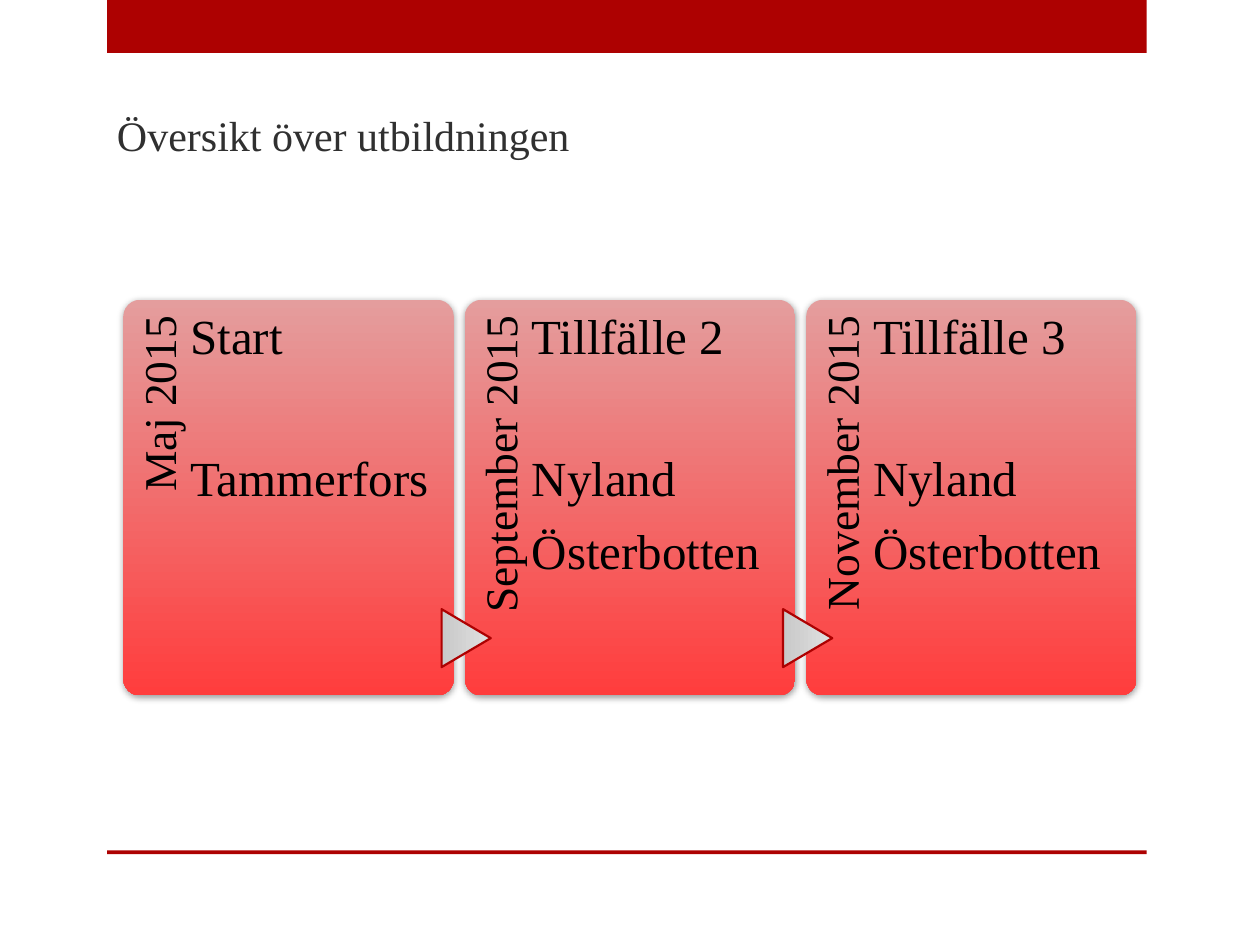
from lxml.etree import SubElement as Sub
from pptx import Presentation
from pptx.dml.color import RGBColor as Rgb
from pptx.enum.shapes import MSO_SHAPE as Kind
from pptx.enum.text import MSO_ANCHOR as Anchor, PP_ALIGN as Align
from pptx.oxml.ns import qn
from pptx.util import Inches, Pt

COLS, ROWS = 100, 75
UNIT = Inches(10) / COLS
FONT = "Times New Roman"
HUES = {"red": "AD0101", "title": "303030", "text": "000000", "shade": "000000",
        "rose": "E49D9D", "hot": "FF3D3D", "pale": "E0E0E0", "grey": "C9C9C9"}
STEPS = [("Maj 2015", ["Start", "Tammerfors"]),
         ("September 2015", ["Tillfälle 2", "Nyland", "Österbotten"]),
         ("November 2015", ["Tillfälle 3", "Nyland", "Österbotten"])]


def hue(name):
    """Return the named colour."""
    return Rgb.from_string(HUES[name])


def scale(*cells):
    """Turn grid cells into slide lengths."""
    return [round(n * UNIT) for n in cells]


def draw(slide, kind, box, fills, turn=0):
    """Add a shape without line or shadow, filled flat or top to bottom."""
    shape = slide.shapes.add_shape(kind, *scale(*box))
    shape.shadow.inherit = False
    shape.rotation = turn
    shape.line.fill.background()
    if len(fills) == 1:
        shape.fill.solid()
        shape.fill.fore_color.rgb = hue(fills[0])
    else:
        shape.fill.gradient()
        shape.fill.gradient_angle = 270
        for stop, name in zip(shape.fill.gradient_stops, fills):
            stop.color.rgb = hue(name)
    return shape


def write(slide, box, lines, size, color="text", pad=(0, 1, 0, 0)):
    """Add a text box with one paragraph for each line."""
    area = slide.shapes.add_textbox(*scale(*box))
    frame = area.text_frame
    frame.word_wrap = True
    (frame.margin_left, frame.margin_top,
     frame.margin_right, frame.margin_bottom) = scale(*pad)
    frame.text = "\n".join(lines)
    for para in frame.paragraphs:
        for run in para.runs:
            run.font.size = Pt(size)
            run.font.name = FONT
            run.font.color.rgb = hue(color)
    return area


def shade(shape):
    """Give a shape a soft shadow below it."""
    effects = shape._element.spPr.find(qn("a:effectLst"))
    outer = Sub(effects, qn("a:outerShdw"), blurRad=str(Pt(4)), dist=str(Pt(1)),
                dir=str(88 * 60000), rotWithShape="0")
    color = Sub(outer, qn("a:srgbClr"), val=HUES["shade"])
    Sub(color, qn("a:alpha"), val="40000")


def frame_page(slide, box):
    """Draw the top band and the bottom rule."""
    x, y, w, h = box
    draw(slide, Kind.RECTANGLE, (x, y, w, 4.2), ["red"])
    draw(slide, Kind.RECTANGLE, (x, y + h - 0.3, w, 0.3), ["red"])


def head(slide, box):
    """Write the slide title."""
    area = write(slide, box, ["Översikt över utbildningen"], 24, "title", (1, 0.5, 1, 0.5))
    area.text_frame.vertical_anchor = Anchor.MIDDLE


def card(slide, box, date, lines, arrow):
    """Draw one step with its upright date, its text and the arrow into it."""
    x, y, w, h = box
    back = draw(slide, Kind.ROUNDED_RECTANGLE, box, ["rose", "hot"])
    back.adjustments[0] = 0.05
    shade(back)
    label = write(slide, (x - 10.2, y + 10.2, 25.7, 5.2), [date], 26, pad=(0, 1, 1.3, 0))
    label.rotation = 270
    para = label.text_frame.paragraphs[0]
    para.alignment = Align.RIGHT
    para.line_spacing = 0.9
    if arrow:
        tip = draw(slide, Kind.FLOWCHART_EXTRACT, (x - 2.2, y + 24.9, 4.6, 3.9),
                   ["pale", "grey"], 90)
        tip.line.color.rgb = hue("red")
        tip.line.width = Pt(1.25)
    body = write(slide, (x + 5.3, y, 19.5, h), lines, 28)
    for i, para in enumerate(body.text_frame.paragraphs):
        para.line_spacing = 0.9
        para.space_after = Pt(11 if i else 51)


def flow(slide, box, gap=0.9):
    """Set the steps side by side at equal gaps."""
    x, y, w, h = box
    wide = (w + gap) / len(STEPS) - gap
    for i, (date, lines) in enumerate(STEPS):
        card(slide, (x + i * (wide + gap), y, wide, h), date, lines, i > 0)


def main():
    """Build and save the slide."""
    deck = Presentation()
    deck.slide_width, deck.slide_height = scale(COLS, ROWS)
    slide = deck.slides.add_slide(deck.slide_layouts[6])
    frame_page(slide, (8.5, 0, 82.5, 67.8))
    head(slide, (8.3, 7.5, 82.5, 6.4))
    flow(slide, (9.8, 23.8, 80.4, 31.4))
    deck.save("out.pptx")


if __name__ == "__main__":
    main()
